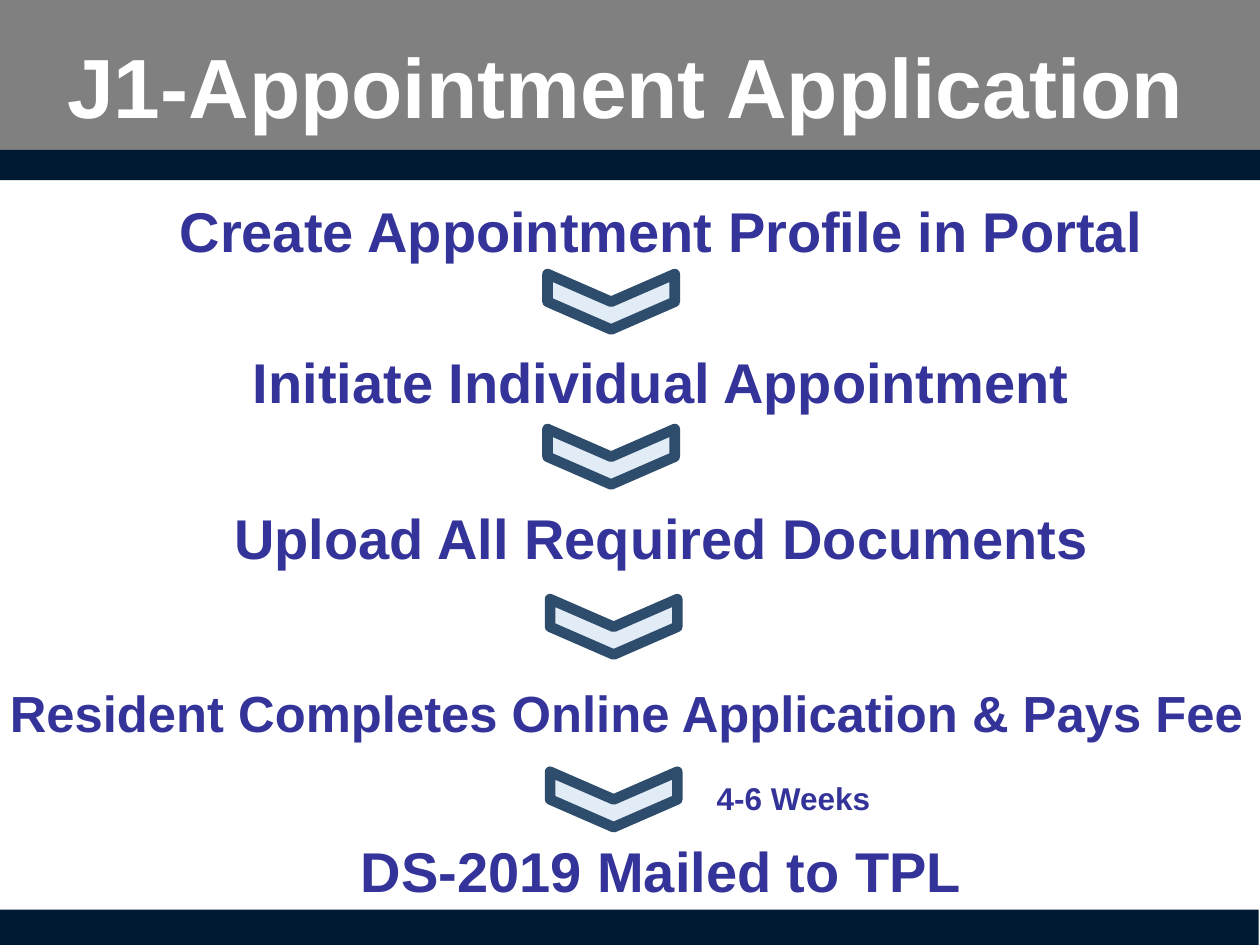
"""Build the J1 appointment application flow slide."""
from dataclasses import dataclass

from pptx import Presentation
from pptx.dml.color import RGBColor
from pptx.enum.shapes import MSO_SHAPE
from pptx.enum.text import MSO_ANCHOR, PP_ALIGN
from pptx.oxml.ns import qn
from pptx.util import Emu, Pt

RECT = MSO_SHAPE.RECTANGLE
CHEVRON = MSO_SHAPE.CHEVRON
CENTER = PP_ALIGN.CENTER
LEFT = PP_ALIGN.LEFT
TOP = MSO_ANCHOR.TOP
MIDDLE = MSO_ANCHOR.MIDDLE
EMU_PER_PX = 9144


@dataclass(frozen=True)
class Theme:
    font: str = "Arial"
    header: str = "808080"
    band: str = "001933"
    title: str = "FFFFFF"
    text: str = "333399"
    arrow_fill: str = "E2ECF6"
    arrow_line: str = "2E4C6B"
    arrow_weight: int = 6
    title_size: int = 48
    step_size: int = 32
    long_step_size: int = 29
    note_size: int = 18


@dataclass(frozen=True)
class Box:
    x: int
    y: int
    w: int
    h: int

    def emu(self) -> tuple[Emu, ...]:
        """Return the box as EMU lengths."""
        return tuple(px(v) for v in (self.x, self.y, self.w, self.h))


@dataclass(frozen=True)
class Label:
    text: str
    box: Box
    size: int
    color: str
    align: PP_ALIGN = CENTER
    anchor: MSO_ANCHOR = TOP
    indent: int = 0


@dataclass(frozen=True)
class Band:
    box: Box
    color: str


THEME = Theme()
BANDS = (
    Band(Box(0, 0, 1000, 131), THEME.header),
    Band(Box(0, 119, 1000, 24), THEME.band),
    Band(Box(0, 722, 999, 30), THEME.band),
)
STEPS = (
    ("Create Appointment Profile in Portal", 151),
    ("Initiate Individual Appointment", 271),
    ("Upload All Required Documents", 395),
    ("DS-2019 Mailed to TPL", 659),
)
LABELS = (
    Label("J1-Appointment Application", Box(24, 28, 945, 79),
          THEME.title_size, THEME.title, anchor=MIDDLE),
    *(Label(text, Box(0, y, 1000, 67), THEME.step_size, THEME.text, indent=50)
      for text, y in STEPS),
    Label("Resident Completes Online Application & Pays Fee",
          Box(-8, 536, 1024, 67), THEME.long_step_size, THEME.text, LEFT, indent=6),
    Label("4-6 Weeks", Box(559, 613, 157, 40), THEME.note_size, THEME.text, LEFT),
)
ARROWS = tuple(Box(x, y, 44, 101)
               for x, y in ((463, 189), (463, 312), (465, 447), (465, 584)))


def px(n: int) -> Emu:
    """Convert px to EMU."""
    return Emu(n * EMU_PER_PX)


def rgb(color: str) -> RGBColor:
    """Convert a hex string to a colour."""
    return RGBColor.from_string(color)


def add_filled(s, kind: MSO_SHAPE, box: Box, color: str):
    """Add a flat filled shape without a line."""
    sp = s.shapes.add_shape(kind, *box.emu())
    sp.shadow.inherit = False
    sp.fill.solid()
    sp.fill.fore_color.rgb = rgb(color)
    sp.line.fill.background()
    return sp


def add_arrow(s, box: Box) -> None:
    """Add a downward chevron with a round-joined outline."""
    sp = add_filled(s, CHEVRON, box, THEME.arrow_fill)
    sp.rotation = 90
    sp.line.color.rgb = rgb(THEME.arrow_line)
    sp.line.width = Pt(THEME.arrow_weight)
    ln = sp.line.fill._xPr
    ln.append(ln.makeelement(qn("a:round"), {}))


def add_label(s, label: Label) -> None:
    """Add a bold one-line text box."""
    tf = s.shapes.add_textbox(*label.box.emu()).text_frame
    tf.word_wrap = True
    tf.vertical_anchor = label.anchor
    p = tf.paragraphs[0]
    p.text = label.text
    p.alignment = label.align
    if label.indent:
        p._p.get_or_add_pPr().set("marL", str(px(label.indent)))
    r = p.runs[0]
    r.font.name = THEME.font
    r.font.size = Pt(label.size)
    r.font.bold = True
    r.font.color.rgb = rgb(label.color)


def main() -> None:
    """Build and save the slide."""
    prs = Presentation()
    prs.slide_width, prs.slide_height = px(1000), px(750)
    s = prs.slides.add_slide(prs.slide_layouts[6])
    for band in BANDS:
        add_filled(s, RECT, band.box, band.color)
    for box in ARROWS:
        add_arrow(s, box)
    for label in LABELS:
        add_label(s, label)
    prs.save("out.pptx")


if __name__ == "__main__":
    main()
